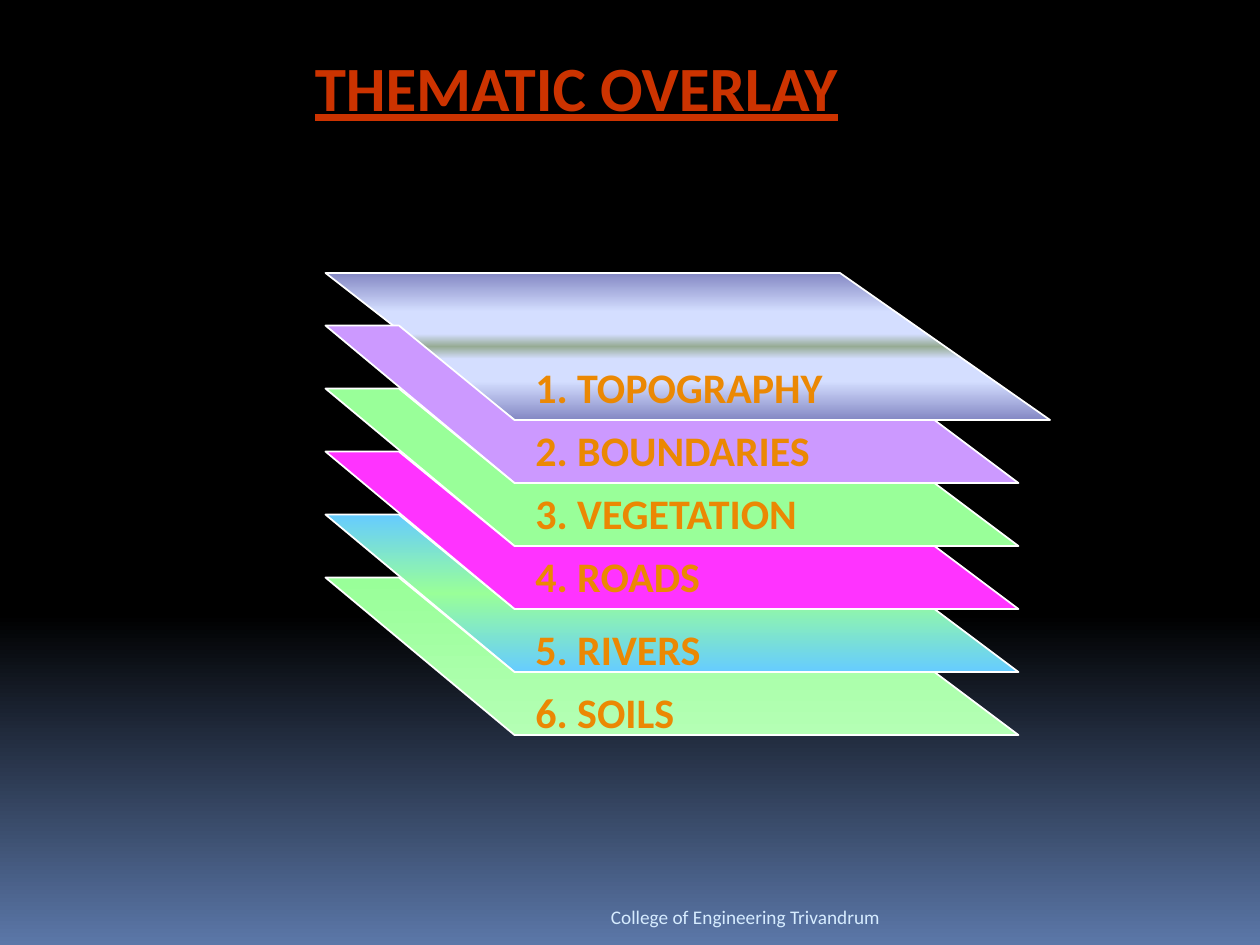
from dataclasses import dataclass
from pptx import Presentation
from pptx.dml.color import RGBColor
from pptx.enum.text import MSO_ANCHOR, MSO_AUTO_SIZE, PP_ALIGN
from pptx.oxml.ns import qn
from pptx.util import Inches, Pt
from lxml import etree

RIGHT = PP_ALIGN.RIGHT
BOTTOM = MSO_ANCHOR.BOTTOM
GROW = MSO_AUTO_SIZE.SHAPE_TO_FIT_TEXT
CELL = Inches(1) // 12  # the grid has 120 columns and 90 rows


@dataclass(frozen=True)
class Theme:
    font: str = "Calibri"
    title: str = "CC3300"
    label: str = "EB8803"
    foot: str = "D6ECFF"
    line: str = "FFFFFF"
    big: int = 36
    mid: int = 24
    small: int = 11
    night: tuple = ((0, "000000"), (65, "000000"), (100, "5B77A8"))


class Deck:
    def __init__(self, theme):
        self.theme = theme
        self.prs = Presentation()
        self.prs.slide_width = 120 * CELL
        self.prs.slide_height = 90 * CELL
        self.slide = self.prs.slides.add_slide(self.prs.slide_layouts[6])

    def blend(self, fill, root, stops):
        """Fill from top to bottom through (percent, colour) stops."""
        fill.gradient()
        fill.gradient_angle = 270
        grad = root.find(".//" + qn("a:gradFill")).find(qn("a:gsLst"))
        for old in list(grad):
            grad.remove(old)
        for pos, color in stops:
            stop = etree.SubElement(grad, qn("a:gs"), pos=str(round(pos * 1000)))
            etree.SubElement(stop, qn("a:srgbClr"), val=color)

    def back(self, stops):
        self.blend(self.slide.background.fill, self.slide._element, stops)

    def group(self):
        return self.slide.shapes.add_group_shape().shapes

    def sheet(self, shapes, points, paint):
        pen = shapes.build_freeform(*points[0], scale=CELL)
        pen.add_line_segments(points[1:], close=True)
        shape = pen.convert_to_shape()
        shape.shadow.inherit = False
        if isinstance(paint, str):
            shape.fill.solid()
            shape.fill.fore_color.rgb = RGBColor.from_string(paint)
        else:
            self.blend(shape.fill, shape._element, paint)
        shape.line.color.rgb = RGBColor.from_string(self.theme.line)
        shape.line.width = Pt(1)

    def text(self, shapes, words, box, size, color, bold=True, wrap=False):
        item = shapes.add_textbox(*(round(n * CELL) for n in box))
        frame = item.text_frame
        frame.text = words
        frame.word_wrap = wrap
        if not wrap:
            frame.auto_size = GROW
        font = frame.paragraphs[0].runs[0].font
        font.name = self.theme.font
        font.size = Pt(size)
        font.bold = bold
        font.color.rgb = RGBColor.from_string(color)
        return frame


def mirror(stops):
    """Run the stops from the middle out to both edges."""
    upper = [(50 - pos / 2, color) for pos, color in reversed(stops)]
    return upper + [(50 + pos / 2, color) for pos, color in stops[1:]]


# Layers from top to bottom: name, paint, label width
LAYERS = [
    ("TOPOGRAPHY", mirror([(0, "96AB94"), (17, "D4DEFF"),
                           (47, "D4DEFF"), (100, "8488C4")]), 35),
    ("BOUNDARIES", "CC99FF", 33.1),
    ("VEGETATION", "99FF99", 33.6),
    ("ROADS", "FF33FF", 20.4),
    ("RIVERS", mirror([(0, "99FF99"), (100, "66CCFF")]), 21.6),
    ("SOILS", [(0, "99FF99"), (100, "B4FFB4")], 18.2),
]
TOP = [(31, 26), (80, 26), (100, 40), (49, 40)]
STEP = 6


def main():
    theme = Theme()
    deck = Deck(theme)
    deck.back(theme.night)

    # Title
    head = deck.text(deck.slide.shapes, "THEMATIC OVERLAY",
                     (28.8, 4, 67.2, 8.4), theme.big, theme.title)
    head.paragraphs[0].runs[0].font.underline = True

    # Stack of layers, each with its label
    for i, (name, paint, width) in enumerate(LAYERS):
        edge = 40 + i * STEP
        under = [(38, edge - 15), (31, edge - 15), (49, edge),
                 (97, edge), (89, edge - 6), (49, edge - 6)]
        part = deck.group()
        deck.sheet(part, under if i else TOP, paint)
        drop = 5.2 if i >= 4 else 6.2
        deck.text(part, f"{i + 1}. {name}", (49.8, edge - drop, width, 6),
                  theme.mid, theme.label)

    # Footer
    foot = deck.text(deck.slide.shapes, "College of Engineering Trivandrum",
                     (12, 84.2, 73, 4.8), theme.small, theme.foot,
                     bold=False, wrap=True)
    foot.vertical_anchor = BOTTOM
    foot.paragraphs[0].alignment = RIGHT

    deck.prs.save("out.pptx")


if __name__ == "__main__":
    main()
